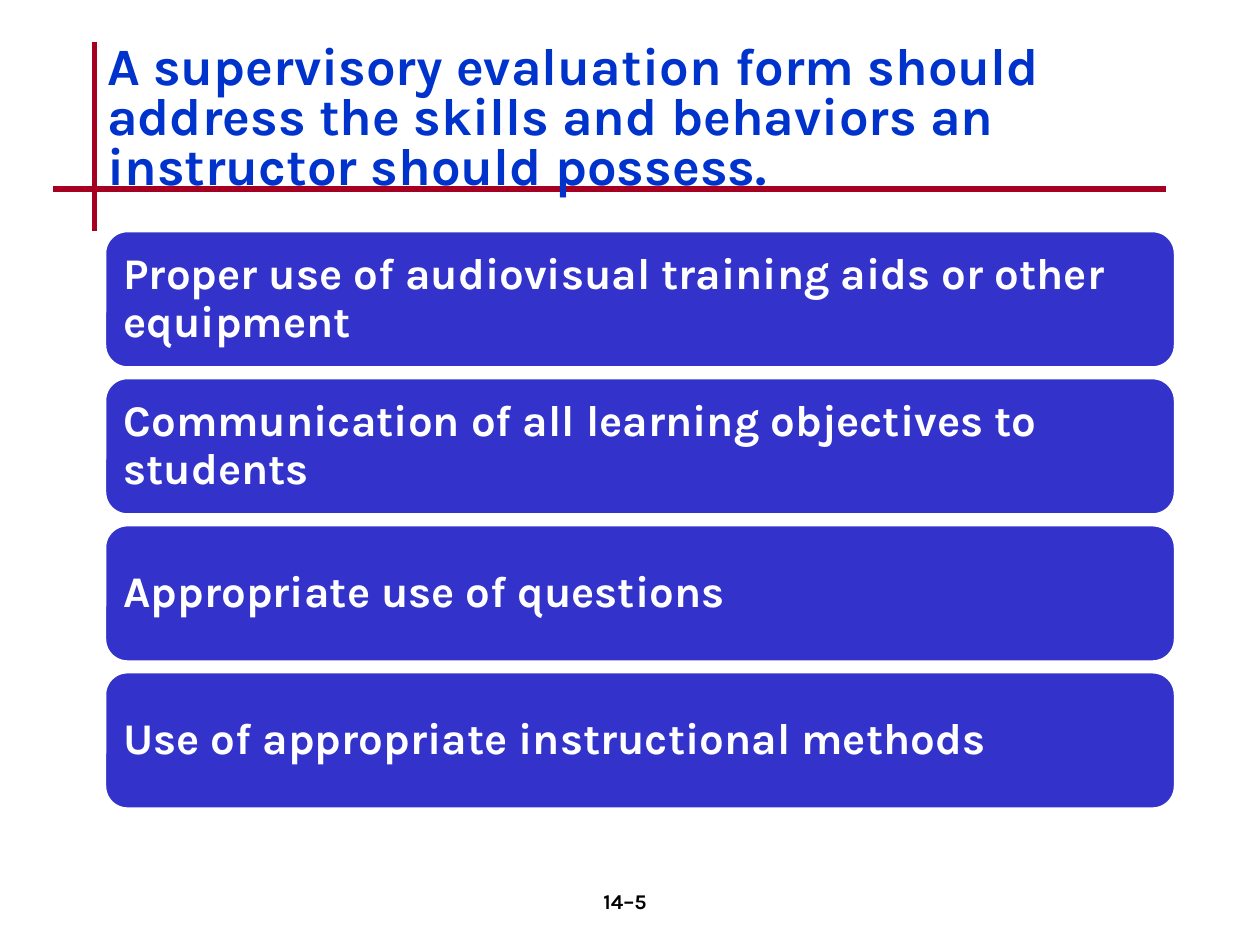
from dataclasses import dataclass

from lxml.etree import SubElement
from pptx import Presentation
from pptx.dml.color import RGBColor
from pptx.enum.shapes import MSO_CONNECTOR, MSO_SHAPE
from pptx.enum.text import MSO_ANCHOR, PP_ALIGN
from pptx.oxml.ns import qn
from pptx.util import Inches, Pt


@dataclass
class Rule:
    x1: float
    y1: float
    x2: float
    y2: float


RULES = [Rule(0.75, 0.33, 0.75, 1.83), Rule(0.42, 1.5, 9.25, 1.5)]
SKILLS = [
    "Proper use of audiovisual training aids or other equipment",
    "Communication of all learning objectives to students",
    "Appropriate use of questions",
    "Use of appropriate instructional methods",
]
TOP, STEP = 1.83, 1.167


def color(code: str) -> RGBColor:
    return RGBColor.from_string(code)


def write(shape, text: str, size: float, code: str, align=PP_ALIGN.LEFT,
          space: float = 1.0, anchor=MSO_ANCHOR.MIDDLE) -> None:
    frame = shape.text_frame
    frame.text = text
    frame.word_wrap = True
    frame.vertical_anchor = anchor
    para = frame.paragraphs[0]
    para.alignment = align
    para.line_spacing = space
    para.space_before = Pt(0)
    font = para.font
    font.name, font.size, font.bold = "Karla", Pt(size), True
    font.color.rgb = color(code)


def draw_rule(slide, rule: Rule) -> None:
    line = slide.shapes.add_connector(
        MSO_CONNECTOR.STRAIGHT, Inches(rule.x1), Inches(rule.y1),
        Inches(rule.x2), Inches(rule.y2))
    line.line.color.rgb = color("A50021")
    line.line.width = Pt(3)
    SubElement(line.element.spPr, qn("a:effectLst"))


def draw_skill(slide, top: float, text: str) -> None:
    box = slide.shapes.add_shape(
        MSO_SHAPE.ROUNDED_RECTANGLE, Inches(0.83), Inches(top),
        Inches(8.5), Inches(1.09))
    box.shadow.inherit = False
    box.fill.solid()
    box.fill.fore_color.rgb = color("3333CC")
    box.line.color.rgb = color("FFFFFF")
    box.line.width = Pt(2)
    frame = box.text_frame
    frame.margin_left = frame.margin_right = Inches(0.1)
    frame.margin_top = frame.margin_bottom = Inches(0.1)
    write(box, text, 25, "FFFFFF", space=0.9)


def main() -> None:
    deck = Presentation()
    deck.slide_width, deck.slide_height = Inches(10), Inches(7.5)
    slide = deck.slides.add_slide(deck.slide_layouts[5])

    # Crossed rules
    for rule in RULES:
        draw_rule(slide, rule)

    # Skill list
    for i, text in enumerate(SKILLS):
        draw_skill(slide, TOP + i * STEP, text)

    # Title, in front of the rules
    title = slide.shapes.title
    title.left, title.top = Inches(0.75), Inches(0.33)
    title.width, title.height = Inches(8.5), Inches(1.25)
    write(title, "A supervisory evaluation form should address the skills "
          "and behaviors an instructor should possess.", 30, "0033CC",
          space=0.8)
    title.element.getparent().append(title.element)

    # Page number
    page = slide.shapes.add_textbox(
        Inches(3.92), Inches(7), Inches(2.08), Inches(0.5))
    write(page, "14–5", 12, "000000", PP_ALIGN.CENTER, anchor=MSO_ANCHOR.TOP)

    deck.save("out.pptx")


if __name__ == "__main__":
    main()
